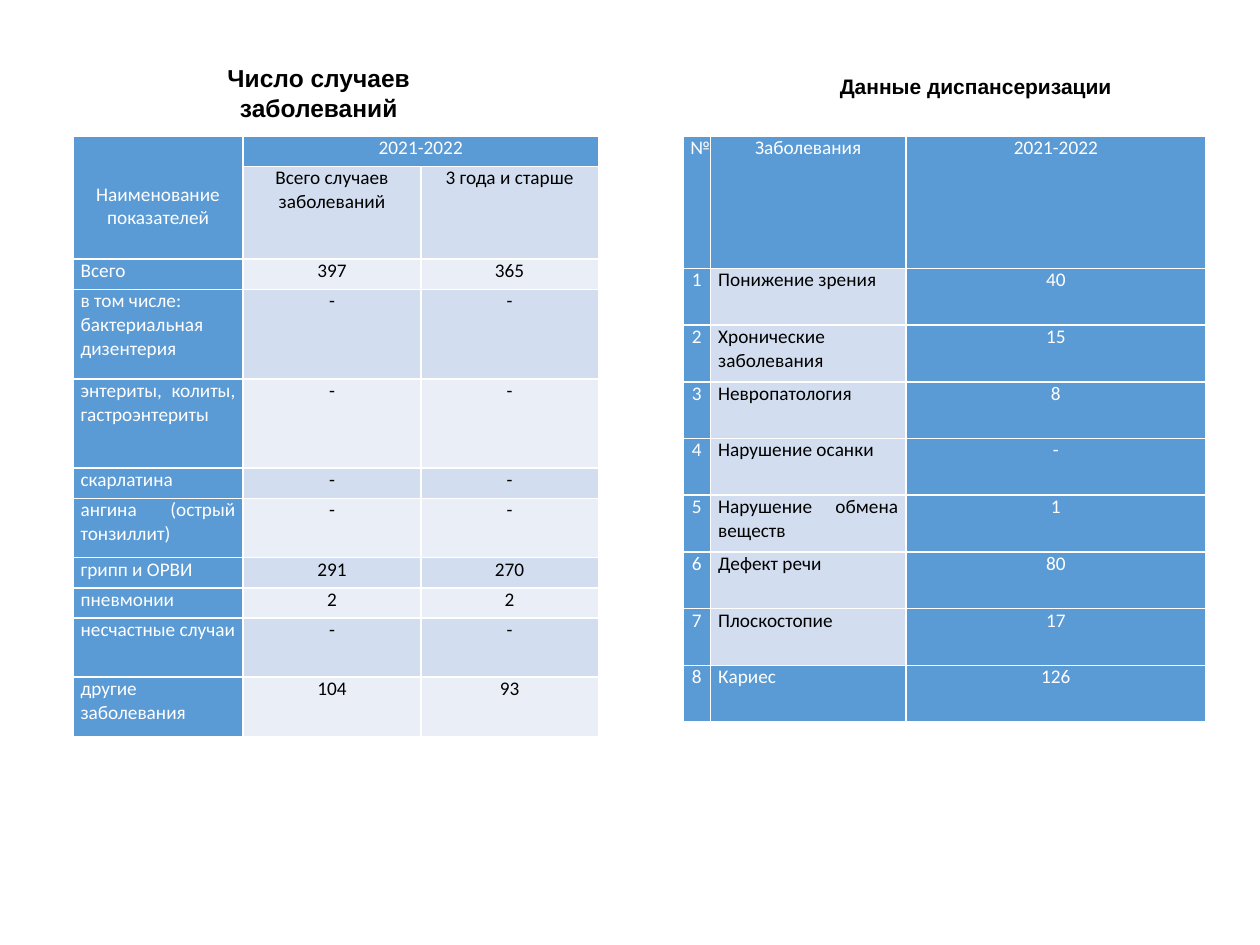
from lxml import etree
from pptx import Presentation
from pptx.dml.color import RGBColor
from pptx.enum.text import MSO_ANCHOR, PP_ALIGN
from pptx.oxml.ns import qn
from pptx.util import Inches, Pt

CENTER, JUSTIFY = PP_ALIGN.CENTER, PP_ALIGN.JUSTIFY
MIDDLE = MSO_ANCHOR.MIDDLE
COLORS = {"blue": "5B9BD5", "band": "D2DEEF", "pale": "EAEFF7",
          "white": "FFFFFF", "black": "000000"}


def add_grid(left, widths, heights, rows):
    """Add an unstyled table filled with text, with white cell borders."""
    frame = slide.shapes.add_table(len(rows), len(widths), Inches(left), Inches(1.08),
                                   Inches(sum(widths)), Inches(sum(heights)))
    table = frame.table
    table.first_row = table.horz_banding = False
    for column, width in zip(table.columns, widths):
        column.width = Inches(width)
    for row, height, texts in zip(table.rows, heights, rows):
        row.height = Inches(height)
        for cell, text in zip(row.cells, texts):
            cell.margin_left = cell.margin_right = Inches(0.06)
            cell.margin_top = cell.margin_bottom = 0
            cell.text_frame.text = text
            properties = cell._tc.get_or_add_tcPr()
            for side in ("a:lnL", "a:lnR", "a:lnT", "a:lnB"):
                line = etree.SubElement(properties, qn(side), w=str(Pt(1)))
                line_fill = etree.SubElement(line, qn("a:solidFill"))
                etree.SubElement(line_fill, qn("a:srgbClr"), val=COLORS["white"])
    return table


def style_cell(cell, fill, align):
    cell.fill.solid()
    cell.fill.fore_color.rgb = RGBColor.from_string(COLORS[fill])
    text_color = COLORS["white" if fill == "blue" else "black"]
    for paragraph in cell.text_frame.paragraphs:
        paragraph.alignment = align
        for run in paragraph.runs:
            run.font.name = "Calibri"
            run.font.size = Pt(11)
            run.font.color.rgb = RGBColor.from_string(text_color)


prs = Presentation()
prs.slide_width, prs.slide_height = Inches(10), Inches(7.5)
slide = prs.slides.add_slide(prs.slide_layouts[6])

# Headings: text, left, top, width, height, side inset, bottom inset, size
headings = [
    ("Число случаев заболеваний", 1.08, 0.58, 2.9, 0.31, 0.15, 0.04, 14),
    ("Данные диспансеризации", 6.33, 0.54, 2.83, 0.5, 0.07, 0.26, 12),
]
for text, left, top, width, height, side, bottom, size in headings:
    heading = slide.shapes.add_textbox(Inches(left), Inches(top), Inches(width), Inches(height))
    frame = heading.text_frame
    frame.word_wrap = True
    frame.vertical_anchor = MIDDLE
    frame.margin_left = frame.margin_right = Inches(side)
    frame.margin_top, frame.margin_bottom = Inches(0.04), Inches(bottom)
    frame.text = text
    paragraph = frame.paragraphs[0]
    paragraph.alignment = CENTER
    font = paragraph.runs[0].font
    font.name, font.size, font.bold = "Arial", Pt(size), True
    font.color.rgb = RGBColor.from_string(COLORS["black"])

# Number of cases
case_rows = [
    ("Наименование показателей", "2021-2022", ""),
    ("", "Всего случаев заболеваний", "3 года и старше"),
    ("Всего", "397", "365"),
    ("в том числе:\nбактериальная дизентерия", "-", "-"),
    ("энтериты, колиты, гастроэнтериты", "-", "-"),
    ("скарлатина", "-", "-"),
    ("ангина (острый тонзиллит)", "-", "-"),
    ("грипп и ОРВИ", "291", "270"),
    ("пневмонии", "2", "2"),
    ("несчастные случаи", "-", "-"),
    ("другие заболевания", "104", "93"),
]
case_heights = [0.24, 0.71, 0.24, 0.71, 0.71, 0.24, 0.47, 0.24, 0.24, 0.47, 0.47]
cases = add_grid(0.58, [1.35, 1.41, 1.41], case_heights, case_rows)
for r in range(len(case_rows)):
    for c in range(3):
        fill = "blue" if r == 0 or c == 0 else "band" if r % 2 else "pale"
        style_cell(cases.cell(r, c), fill, JUSTIFY if c == 0 and r > 1 else CENTER)
cases.cell(0, 0).merge(cases.cell(1, 0))
cases.cell(0, 1).merge(cases.cell(0, 2))
cases.cell(0, 0).margin_top = Inches(0.37)

# Health check results
findings = [
    ("Понижение зрения", "40"),
    ("Хронические заболевания", "15"),
    ("Невропатология", "8"),
    ("Нарушение осанки", "-"),
    ("Нарушение обмена веществ", "1"),
    ("Дефект речи", "80"),
    ("Плоскостопие", "17"),
    ("Кариес", "126"),
]
checkup_rows = [("№", "Заболевания", "2021-2022")]
checkup_rows += [(str(n), disease, count) for n, (disease, count) in enumerate(findings, 1)]
last = len(findings)
checkup = add_grid(5.42, [0.22, 1.55, 2.38], [1.05] + [0.45] * last, checkup_rows)
for r in range(last + 1):
    for c in range(3):
        fill = "band" if c == 1 and 0 < r < last else "blue"
        style_cell(checkup.cell(r, c), fill, JUSTIFY if c == 1 and r > 0 else CENTER)

prs.save("out.pptx")
